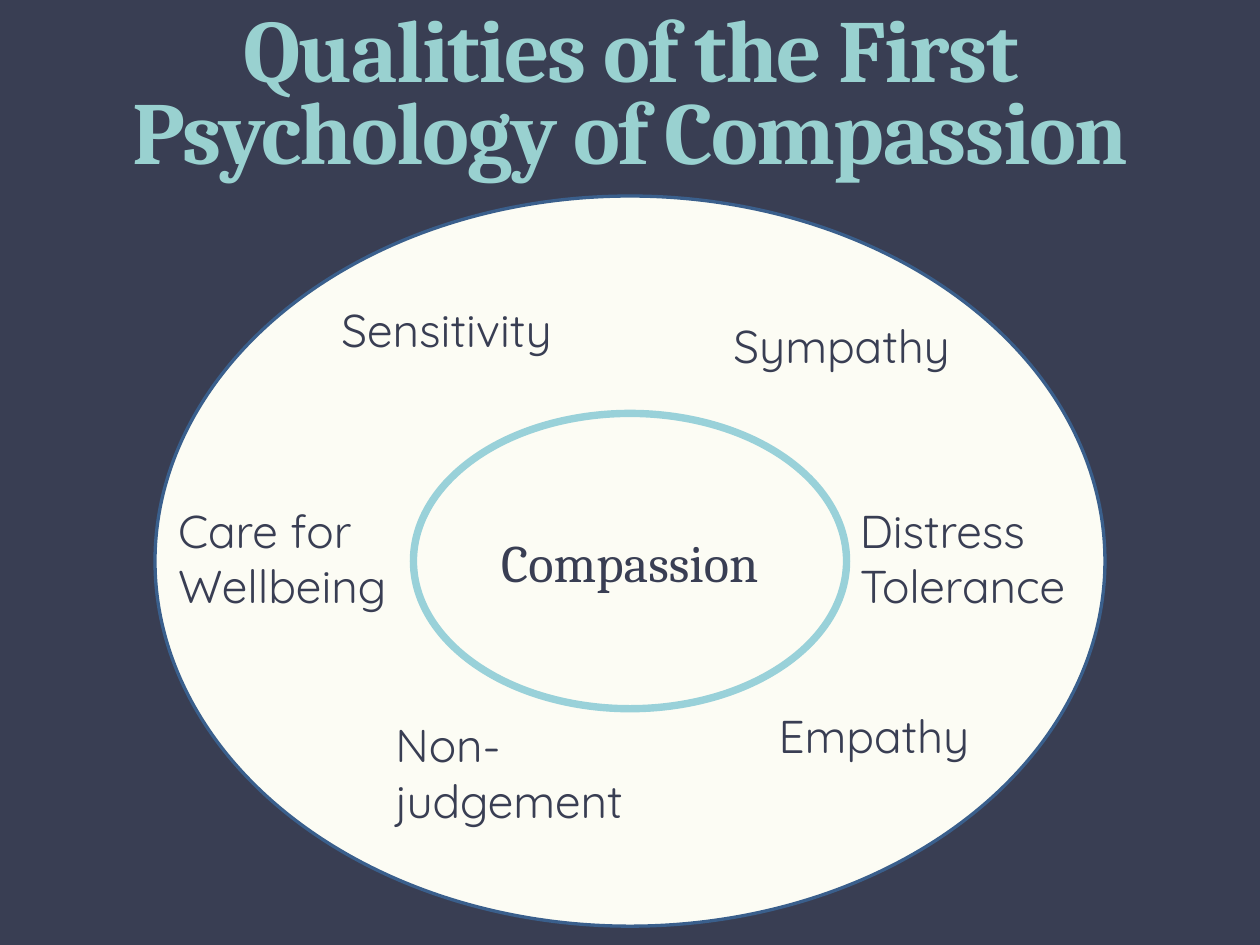
from typing import NamedTuple, Optional

from pptx import Presentation
from pptx import util as u
from pptx.dml.color import RGBColor
from pptx.enum import shapes, text

COLORS = {
    "navy": "393E53",
    "cream": "FCFCF4",
    "rim": "3A5F8C",
    "ring": "99D1D9",
    "title": "99D1D0",
}
WIDTH, HEIGHT = 768, 576


class Oval(NamedTuple):
    top: float
    width: float
    height: float
    fill: Optional[str]
    line: str
    weight: float


class Quality(NamedTuple):
    label: str
    left: float
    top: float
    width: float
    height: float


OUTER = Oval(119.5, 579, 445, "cream", "rim", 2)
INNER = Oval(252, 264, 180, None, "ring", 4.5)
QUALITIES = [
    Quality("Sensitivity", 201, 180, 144, 41),
    Quality("Sympathy", 440, 190, 160.5, 41),
    Quality("Distress Tolerance", 517, 302.5, 160.5, 75),
    Quality("Empathy", 467.5, 428, 160.5, 41),
    Quality("Non-judgement", 234, 433.5, 188, 75),
    Quality("Care for Wellbeing", 101.5, 302.5, 188, 75),
]


def rgb(name: str) -> RGBColor:
    return RGBColor.from_string(COLORS[name])


def add_run(p, content: str, size: float, font: str, color: str, bold: bool = False):
    r = p.add_run()
    r.text = content
    r.font.size = u.Pt(size)
    r.font.name = font
    r.font.bold = bold
    r.font.color.rgb = rgb(color)
    return r


def add_oval(s, oval: Oval):
    sp = s.shapes.add_shape(
        shapes.MSO_SHAPE.OVAL, u.Pt((WIDTH - oval.width) / 2), u.Pt(oval.top),
        u.Pt(oval.width), u.Pt(oval.height))
    sp.shadow.inherit = False
    if oval.fill:
        sp.fill.solid()
        sp.fill.fore_color.rgb = rgb(oval.fill)
    else:
        sp.fill.background()
    sp.line.color.rgb = rgb(oval.line)
    sp.line.width = u.Pt(oval.weight)
    return sp


def add_box(s, left: float, top: float, width: float, height: float):
    sp = s.shapes.add_textbox(u.Pt(left), u.Pt(top), u.Pt(width), u.Pt(height))
    tf = sp.text_frame
    tf.word_wrap = True
    tf.auto_size = text.MSO_AUTO_SIZE.SHAPE_TO_FIT_TEXT
    return tf


def add_title(s) -> None:
    tf = add_box(s, 15, 11, 738, 153)
    tf.margin_left = tf.margin_right = tf.margin_top = tf.margin_bottom = 0
    p = tf.paragraphs[0]
    p.alignment = text.PP_ALIGN.CENTER
    p.line_spacing = u.Pt(50)
    r = add_run(p, "Qualities of the First Psychology of Compassion",
                54, "Cambria", "title", bold=True)
    r.font._element.set("spc", "-100")


def add_center(s) -> None:
    tf = add_oval(s, INNER).text_frame
    tf.vertical_anchor = text.MSO_ANCHOR.MIDDLE
    p = tf.paragraphs[0]
    p.alignment = text.PP_ALIGN.CENTER
    add_run(p, "Compassion", 32, "Cambria", "navy")


def add_quality(s, quality: Quality) -> None:
    tf = add_box(s, quality.left, quality.top, quality.width, quality.height)
    add_run(tf.paragraphs[0], quality.label, 28, "Quicksand", "navy")


def main() -> None:
    """Build the compassion qualities slide."""
    prs = Presentation()
    prs.slide_width, prs.slide_height = u.Pt(WIDTH), u.Pt(HEIGHT)
    s = prs.slides.add_slide(prs.slide_layouts[6])
    s.background.fill.solid()
    s.background.fill.fore_color.rgb = rgb("navy")
    add_title(s)
    add_oval(s, OUTER)
    add_center(s)
    for quality in QUALITIES:
        add_quality(s, quality)
    prs.save("out.pptx")


if __name__ == "__main__":
    main()
